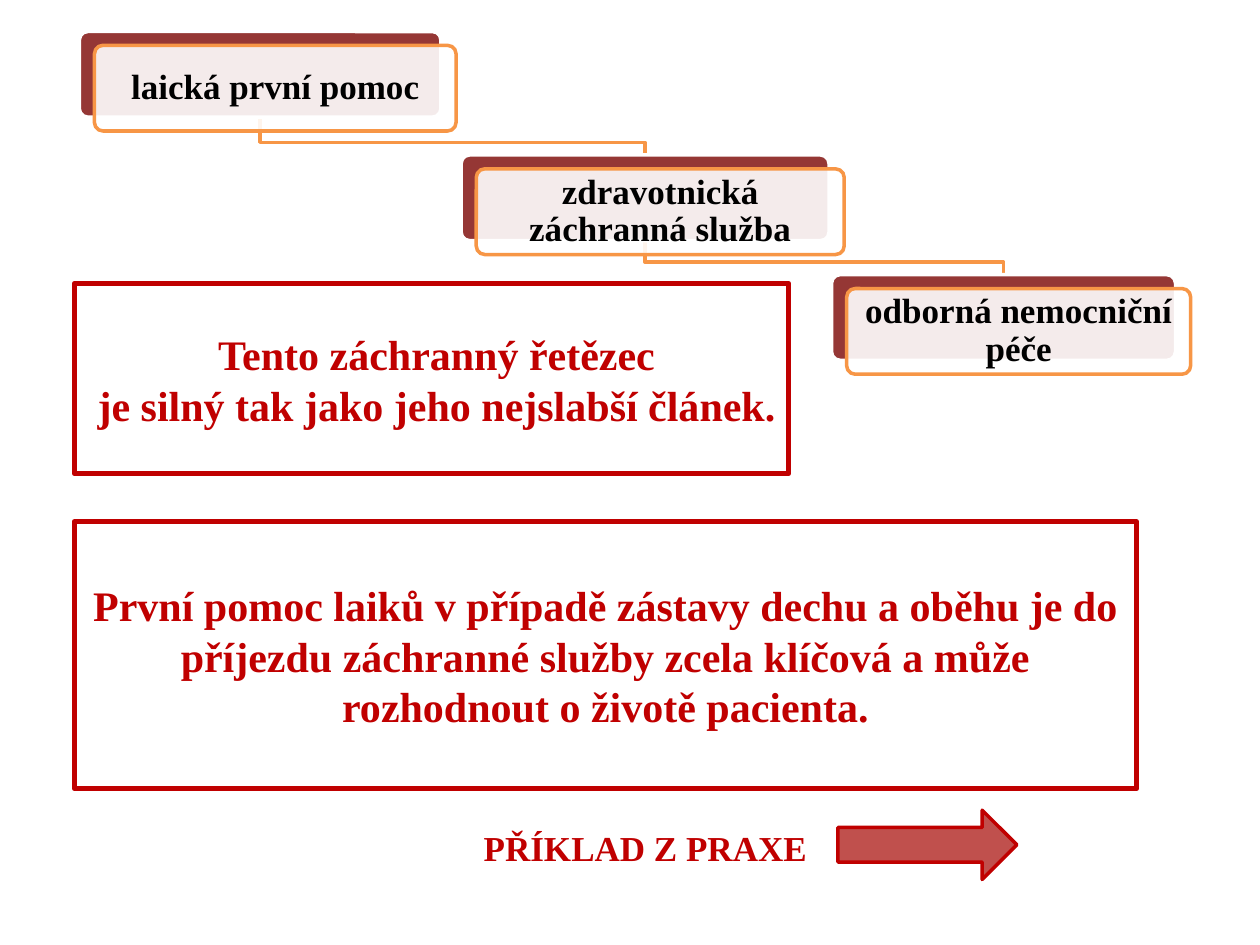
from itertools import pairwise
from lxml.etree import SubElement
from pptx import Presentation
from pptx.dml.color import RGBColor
from pptx.enum.shapes import MSO_SHAPE as Shape
from pptx.enum.text import MSO_ANCHOR as Anchor, PP_ALIGN as Align
from pptx.oxml.ns import qn
from pptx.util import Inches, Pt

COLORS = {"red": "C00000", "dark": "953735", "rose": "C0504D",
          "orange": "F79646", "white": "FFFFFF", "black": "000000"}
FONT = "Times New Roman"

# Steps of the rescue chain: left, top, width, label
STEPS = [(0, 0, 2.87, "laická první pomoc"),
         (3.03, 0.98, 2.92, "zdravotnická záchranná služba"),
         (5.97, 1.93, 2.73, "odborná nemocniční péče")]
CARD = 0.68
SHIFT = 0.12
BEND = 0.1


def paint(shape, fill, line, width):
    shape.shadow.inherit = False
    if fill:
        shape.fill.solid()
        shape.fill.fore_color.rgb = RGBColor.from_string(COLORS[fill])
    else:
        shape.fill.background()
    shape.line.color.rgb = RGBColor.from_string(COLORS[line])
    shape.line.width = Pt(width)


def add_form(slide, kind, box, fill, line, width):
    shape = slide.shapes.add_shape(kind, *map(Inches, box))
    paint(shape, fill, line, width)
    return shape


def write(frame, lines, size, color, align, insets, anchor=Anchor.TOP, space=1.0):
    frame.word_wrap = True
    frame.vertical_anchor = anchor
    (frame.margin_left, frame.margin_top,
     frame.margin_right, frame.margin_bottom) = map(Inches, insets)
    for i, line in enumerate(lines):
        para = frame.paragraphs[0] if i == 0 else frame.add_paragraph()
        para.alignment = align
        para.line_spacing = space
        run = para.add_run()
        run.text = line
        run.font.name = FONT
        run.font.size = Pt(size)
        run.font.bold = True
        run.font.color.rgb = RGBColor.from_string(COLORS[color])


def add_link(slide, start, end):
    (x1, y1), (x2, y2) = start, end
    points = [(x1, y1), (x1, y2 - BEND), (x2, y2 - BEND), (x2, y2)]
    points = [(Inches(x), Inches(y)) for x, y in points]
    form = slide.shapes.build_freeform(*points[0])
    form.add_line_segments(points[1:], close=False)
    paint(form.convert_to_shape(), None, "orange", 2)


def add_card(slide, x, y, width, label):
    back = add_form(slide, Shape.ROUNDED_RECTANGLE, (x, y, width, CARD),
                    "dark", "white", 2)
    front = add_form(slide, Shape.ROUNDED_RECTANGLE,
                     (x + SHIFT, y + SHIFT - 0.01, width, CARD), "white", "orange", 2)
    for card in (back, front):
        card.adjustments[0] = 0.1
    # Front card is slightly see-through
    tint = front.fill._xPr.find(qn("a:solidFill"))[0]
    SubElement(tint, qn("a:alpha"), val="90000")
    write(front.text_frame, [label], 20, "black", Align.CENTER,
          [0.06] * 4, Anchor.MIDDLE, 0.9)


def add_chain(slide, left, top):
    steps = [(left + x, top + y, w, label) for x, y, w, label in STEPS]
    # Links lie behind the cards
    for (x1, y1, w1, _), (x2, y2, w2, _) in reversed(list(pairwise(steps))):
        add_link(slide, (x1 + w1 / 2, y1 + CARD), (x2 + w2 / 2, y2))
    for step in steps:
        add_card(slide, *step)


def add_note(slide, box, lines, insets):
    note = add_form(slide, Shape.RECTANGLE, box, None, "red", 3)
    write(note.text_frame, lines, 24, "red", Align.CENTER, insets)


def add_case(slide, left, top):
    label = slide.shapes.add_textbox(*map(Inches, (left, top + 0.08, 4.09, 0.44)))
    write(label.text_frame, ["PŘÍKLAD Z PRAXE"], 20, "red", Align.LEFT,
          (0.1, 0.05, 0.1, 0.05))
    add_form(slide, Shape.RIGHT_ARROW, (left + 2.91, top, 1.42, 0.55),
             "rose", "red", 2)


def main():
    deck = Presentation()
    deck.slide_width, deck.slide_height = Inches(10), Inches(7.5)
    slide = deck.slides.add_slide(deck.slide_layouts[6])

    # Strength of the chain
    add_note(slide, (0.59, 2.25, 5.67, 1.51),
             ["Tento záchranný řetězec", "je silný tak jako jeho nejslabší článek."],
             (0.13, 0.36, 0.05, 0.05))
    # Pointer to the case study
    add_case(slide, 3.74, 6.43)
    # Rescue chain
    add_chain(slide, 0.63, 0.25)
    # Role of bystanders
    add_note(slide, (0.59, 4.14, 8.43, 2.12),
             ["První pomoc laiků v případě zástavy dechu a oběhu je do příjezdu "
              "záchranné služby zcela klíčová a může rozhodnout o životě pacienta."],
             (0.1, 0.46, 0.1, 0.05))

    deck.save("out.pptx")


if __name__ == "__main__":
    main()
